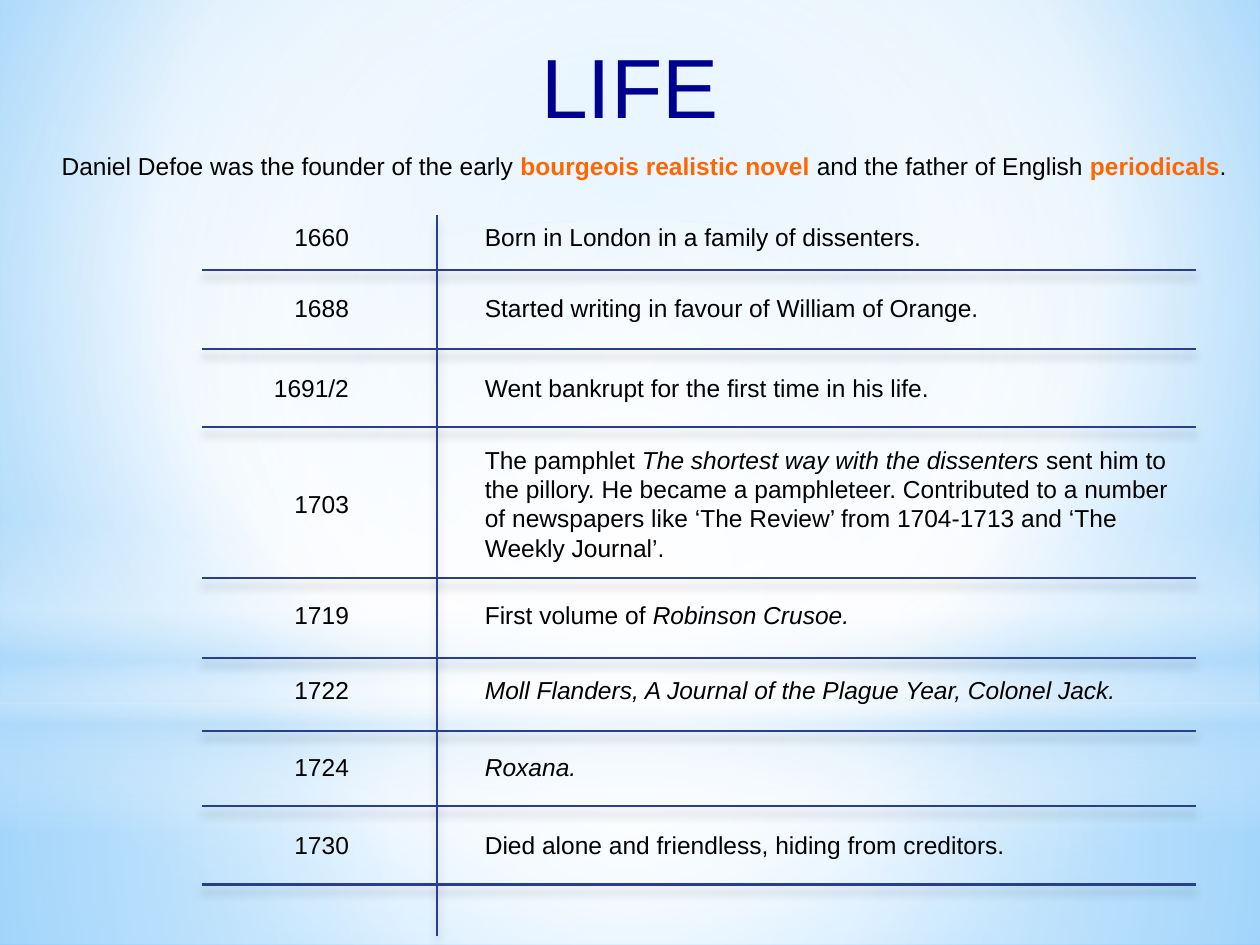
from lxml.etree import SubElement
from pptx import Presentation
from pptx.dml.color import RGBColor
from pptx.enum.shapes import MSO_CONNECTOR as CONN, MSO_SHAPE as SHAPE
from pptx.enum.text import MSO_ANCHOR as ANCHOR, MSO_AUTO_SIZE as AUTO, PP_ALIGN as ALIGN
from pptx.oxml.ns import qn
from pptx.util import Inches, Pt

NAVY, ORANGE, BLACK, RULE = "000090", "FF6600", "000000", "2A3E8E"
WHITE, SKY = "FFFFFF", "B4DCFA"
CENTER = (50, 50, 50, 50)
LINE_H = 0.34
ITALIC = {"italic": True}
ACCENT = {"color": ORANGE, "bold": True}

INTRO = [
    ("Daniel Defoe was the founder of the early ", {}),
    ("bourgeois realistic novel ", ACCENT),
    ("and the father of English ", {}),
    ("periodicals", ACCENT),
    (".", {}),
]
EVENTS = [
    ("1660", 1.71, 2.14, LINE_H, [("Born in London in a family of dissenters.", {})]),
    ("1688", 2.28, 2.77, LINE_H, [("Started writing in favour of William of Orange.", {})]),
    ("1691/2", 2.91, 3.39, LINE_H, [("Went bankrupt for the first time in his life.", {})]),
    ("1703", 3.83, 4.59, 1.04, [
        ("The pamphlet ", {}),
        ("The shortest way with the dissenters", ITALIC),
        (" sent him to the pillory. He became a pamphleteer. Contributed to a number "
         "of newspapers like ‘The Review’ from 1704-1713 and ‘The Weekly Journal’.", {}),
    ]),
    ("1719", 4.71, 5.22, LINE_H, [("First volume of ", {}), ("Robinson Crusoe.", ITALIC)]),
    ("1722", 5.31, 5.8, LINE_H,
     [("Moll Flanders, A Journal of the Plague Year, Colonel Jack.", ITALIC)]),
    ("1724", 5.92, 6.4, LINE_H, [("Roxana.", ITALIC)]),
    ("1730", 6.54, 7.02, LINE_H, [("Died alone and friendless, hiding from creditors.", {})]),
]


def rgb(value):
    return RGBColor.from_string(value)


def add_color(parent, color, opacity):
    clr = SubElement(parent, qn("a:srgbClr"), val=color)
    if opacity < 100:
        SubElement(clr, qn("a:alpha"), val=str(opacity * 1000))


def set_gradient(fill, element, stops, focus=None, angle=90):
    fill.gradient()
    grad = element.xpath(".//a:gradFill")[0]
    for child in list(grad):
        grad.remove(child)
    gs_list = SubElement(grad, qn("a:gsLst"))
    for pos, color, opacity in stops:
        add_color(SubElement(gs_list, qn("a:gs"), pos=str(pos * 1000)), color, opacity)
    if focus:
        circle = SubElement(grad, qn("a:path"), path="circle")
        sides = {side: str(v * 1000) for side, v in zip("ltrb", focus)}
        SubElement(circle, qn("a:fillToRect"), **sides)
    else:
        SubElement(grad, qn("a:lin"), ang=str(angle * 60000), scaled="0")


def write_text(tf, runs, size=14, color=BLACK, align=ALIGN.LEFT, font="Arial"):
    p = tf.paragraphs[0]
    p.alignment = align
    for text, style in runs:
        r = p.add_run()
        r.text = text
        r.font.name = font
        r.font.size = Pt(size)
        r.font.bold = style.get("bold", False)
        r.font.italic = style.get("italic", False)
        r.font.color.rgb = rgb(style.get("color", color))
    return p


def add_text(slide, left, top, width, height, runs, right_inset=0.1, **fmt):
    sp = slide.shapes.add_textbox(Inches(left), Inches(top), Inches(width), Inches(height))
    tf = sp.text_frame
    tf.word_wrap = True
    tf.auto_size = AUTO.SHAPE_TO_FIT_TEXT
    tf.margin_right = Inches(right_inset)
    write_text(tf, runs, **fmt)


def add_rule(slide, x1, y1, x2, y2):
    line = slide.shapes.add_connector(
        CONN.STRAIGHT, Inches(x1), Inches(y1), Inches(x2), Inches(y2))
    line.line.color.rgb = rgb(RULE)
    line.line.width = Pt(1.25)
    effects = SubElement(line.element.spPr, qn("a:effectLst"))
    shadow = SubElement(effects, qn("a:outerShdw"), blurRad=str(Pt(5)), dist=str(Pt(4)),
                        dir="5400000", rotWithShape="0")
    add_color(shadow, BLACK, 20)


def build_backdrop(slide, width, height):
    set_gradient(slide.background.fill, slide.element,
                 [(0, "9ED5FF", 100), (60, WHITE, 100), (100, "5BB9FF", 100)],
                 (20, 10, 20, 60))
    horizon = 5.58
    glows = [
        (SHAPE.RECTANGLE, horizon, height - horizon,
         [(0, WHITE, 91), (37, WHITE, 76), (100, SKY, 79)], CENTER),
        (SHAPE.RECTANGLE, 0, horizon,
         [(0, WHITE, 89), (48, WHITE, 62), (100, SKY, 79)], CENTER),
        (SHAPE.RECTANGLE, 4.12, 2.5,
         [(0, WHITE, 0), (29, WHITE, 30), (45, SKY, 40),
          (55, WHITE, 26), (65, SKY, 60), (100, WHITE, 0)], None),
        (SHAPE.OVAL, 1.75, horizon, [(0, WHITE, 100), (56, WHITE, 0)], CENTER),
    ]
    for kind, top, glow_h, stops, focus in glows:
        sp = slide.shapes.add_shape(kind, 0, Inches(top), Inches(width), Inches(glow_h))
        sp.shadow.inherit = False
        sp.line.fill.background()
        set_gradient(sp.fill, sp.element, stops, focus)
        slide.shapes.title.element.addprevious(sp.element)


def build_title(slide, left, top, width, height):
    sp = slide.shapes.title
    sp.left, sp.top, sp.width, sp.height = map(Inches, (left, top, width, height))
    tf = sp.text_frame
    tf.auto_size = AUTO.NONE
    tf.vertical_anchor = ANCHOR.TOP
    tf.margin_top = Inches(0.12)
    p = write_text(tf, [("LIFE", {})], size=48, color=NAVY, align=ALIGN.CENTER)
    p.space_after = Pt(3)


def build_timeline(slide, left, top, width, height):
    divider = left + 1.87
    year_w, year_right = 1.93, divider - 0.55
    event_left = divider + 0.28
    for year, y, rule_y, event_h, runs in EVENTS:
        add_text(slide, year_right - year_w, y, year_w, LINE_H, [(year, {})],
                 right_inset=0.15, align=ALIGN.RIGHT)
        event_top = y + (LINE_H - event_h) / 2
        add_text(slide, event_left, event_top, left + width - event_left, event_h, runs)
        add_rule(slide, left, rule_y, left + width, rule_y)
    add_rule(slide, divider, top, divider, top + height)


def main():
    prs = Presentation()
    prs.slide_width, prs.slide_height = Inches(10), Inches(7.5)
    slide = prs.slides.add_slide(prs.slide_layouts[5])
    build_backdrop(slide, 10, 7.5)
    build_title(slide, 0.34, 0.15, 9.32, 1.11)
    build_timeline(slide, 1.6, 1.71, 7.89, 5.72)
    add_text(slide, 0.39, 1.15, 9.51, LINE_H, INTRO)
    prs.save("out.pptx")


if __name__ == "__main__":
    main()
